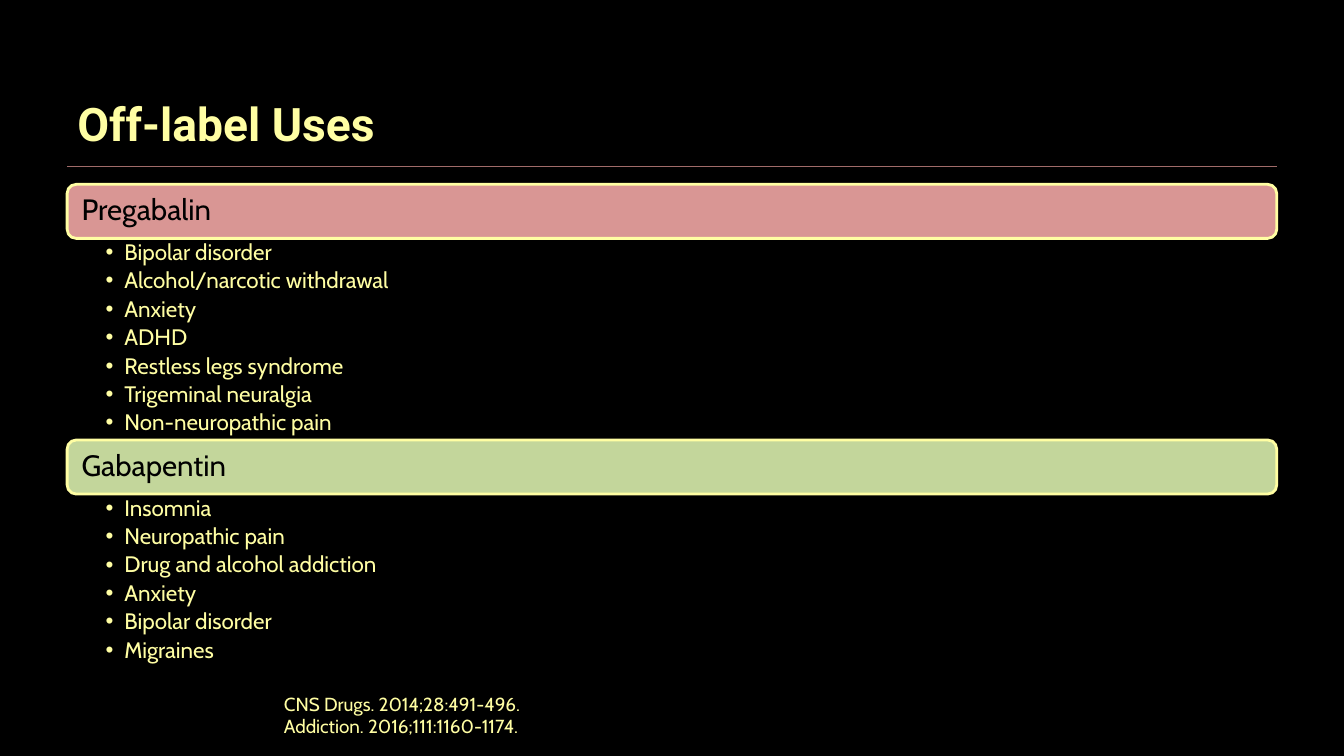
import pptx
import pptx.dml.color
import pptx.enum.shapes
import pptx.enum.text
import pptx.oxml
import pptx.oxml.ns
import pptx.util

Pt = pptx.util.Pt
RGBColor = pptx.dml.color.RGBColor
Anchor = pptx.enum.text.MSO_ANCHOR
Align = pptx.enum.text.PP_ALIGN

BLACK = RGBColor(0x00, 0x00, 0x00)
YELLOW = RGBColor(0xFF, 0xFE, 0xA3)
ROSE = RGBColor(0xD9, 0x96, 0x94)
GREEN = RGBColor(0xC3, 0xD6, 0x9B)
RULE_RED = RGBColor(0xA0, 0x6B, 0x69)

LEFT, WIDTH = 48, 864
BAR_HEIGHT = 38.6
TITLE_FONT = {"name": "Roboto", "size": Pt(33), "bold": True}
LABEL_FONT = {"name": "Cabin", "size": Pt(21)}
LIST_FONT = {"name": "Cabin", "size": Pt(16)}
CITATION_FONT = {"name": "Cabin", "size": Pt(13.5)}

DRUGS = [
    ("Pregabalin", ROSE, 131.7, 144,
     ["Bipolar disorder", "Alcohol/narcotic withdrawal", "Anxiety", "ADHD",
      "Restless legs syndrome", "Trigeminal neuralgia", "Non-neuropathic pain"]),
    ("Gabapentin", GREEN, 314.3, 123,
     ["Insomnia", "Neuropathic pain", "Drug and alcohol addiction", "Anxiety",
      "Bipolar disorder", "Migraines"]),
]
CITATIONS = ["CNS Drugs. 2014;28:491-496.", "Addiction. 2016;111:1160-1174."]


def set_attributes(target, values):
    for name, value in values.items():
        setattr(target, name, value)


def place(shape, left, top, width, height):
    set_attributes(shape, {"left": Pt(left), "top": Pt(top),
                           "width": Pt(width), "height": Pt(height)})


def add_bullet(para, indent):
    properties = para._p.get_or_add_pPr()
    properties.set("marL", str(Pt(indent)))
    properties.set("indent", str(-Pt(indent)))
    bullet = pptx.oxml.parse_xml(
        f'<a:buChar {pptx.oxml.ns.nsdecls("a")} char="•"/>')
    properties.append(bullet)


def write_lines(shape, lines, font, color, frame_format, para_format, indent=None):
    frame = shape.text_frame
    set_attributes(frame, {"word_wrap": True,
                           "auto_size": pptx.enum.text.MSO_AUTO_SIZE.NONE,
                           **frame_format})
    for index, line in enumerate(lines):
        para = frame.paragraphs[0] if index == 0 else frame.add_paragraph()
        if indent:
            add_bullet(para, indent)
        set_attributes(para, {"alignment": Align.LEFT, "space_before": Pt(0),
                              **para_format})
        span = para.add_run()
        span.text = line
        set_attributes(span.font, font)
        span.font.color.rgb = color


def add_heading(page, left, top, width, height):
    title = page.shapes.title
    place(title, left, top, width, height)
    write_lines(title, ["Off-label Uses"], TITLE_FONT, YELLOW,
                {"vertical_anchor": Anchor.BOTTOM}, {})
    rule_top = Pt(top + height + 7.2)
    rule = page.shapes.add_connector(
        pptx.enum.shapes.MSO_CONNECTOR.STRAIGHT,
        Pt(left), rule_top, Pt(left + width), rule_top)
    rule.line.color.rgb = RULE_RED
    rule.line.width = Pt(0.75)
    rule._element.spPr.append(pptx.oxml.parse_xml(
        f'<a:effectLst {pptx.oxml.ns.nsdecls("a")}/>'))


def add_drug(page, body, drug, left, width):
    """Draw a drug's label bar with its list of uses directly below."""
    name, fill, top, list_height, uses = drug
    bar = page.shapes.add_shape(
        pptx.enum.shapes.MSO_SHAPE.ROUNDED_RECTANGLE,
        Pt(left), Pt(top), Pt(width), Pt(BAR_HEIGHT))
    bar.shadow.inherit = False
    bar.fill.solid()
    bar.fill.fore_color.rgb = fill
    bar.line.color.rgb = YELLOW
    bar.line.width = Pt(2)
    write_lines(bar, [name], LABEL_FONT, BLACK,
                {"vertical_anchor": Anchor.MIDDLE, "margin_left": Pt(8.4)},
                {"line_spacing": 0.9})

    place(body, left, top + BAR_HEIGHT, width, list_height)
    write_lines(body, uses, LIST_FONT, YELLOW,
                {"vertical_anchor": Anchor.TOP,
                 "margin_left": Pt(27.4), "margin_right": Pt(11.5),
                 "margin_top": Pt(2), "margin_bottom": Pt(2)},
                {"line_spacing": 0.9, "space_after": Pt(3)}, indent=13.5)


def add_citations(page, left, top, width, height):
    box = page.shapes.add_textbox(Pt(left), Pt(top), Pt(width), Pt(height))
    write_lines(box, CITATIONS, CITATION_FONT, YELLOW, {}, {})


def main():
    deck = pptx.Presentation()
    deck.slide_width, deck.slide_height = Pt(960), Pt(540)
    page = deck.slides.add_slide(deck.slide_layouts.get_by_name("Two Content"))
    page.background.fill.solid()
    page.background.fill.fore_color.rgb = BLACK

    add_heading(page, LEFT, 21.6, WIDTH, 90)
    bodies = [page.placeholders[1], page.placeholders[2]]
    for body, drug in zip(bodies, DRUGS):
        add_drug(page, body, drug, LEFT, WIDTH)
    add_citations(page, 195.8, 491, 513.4, 34)
    deck.save("out.pptx")


if __name__ == "__main__":
    main()
